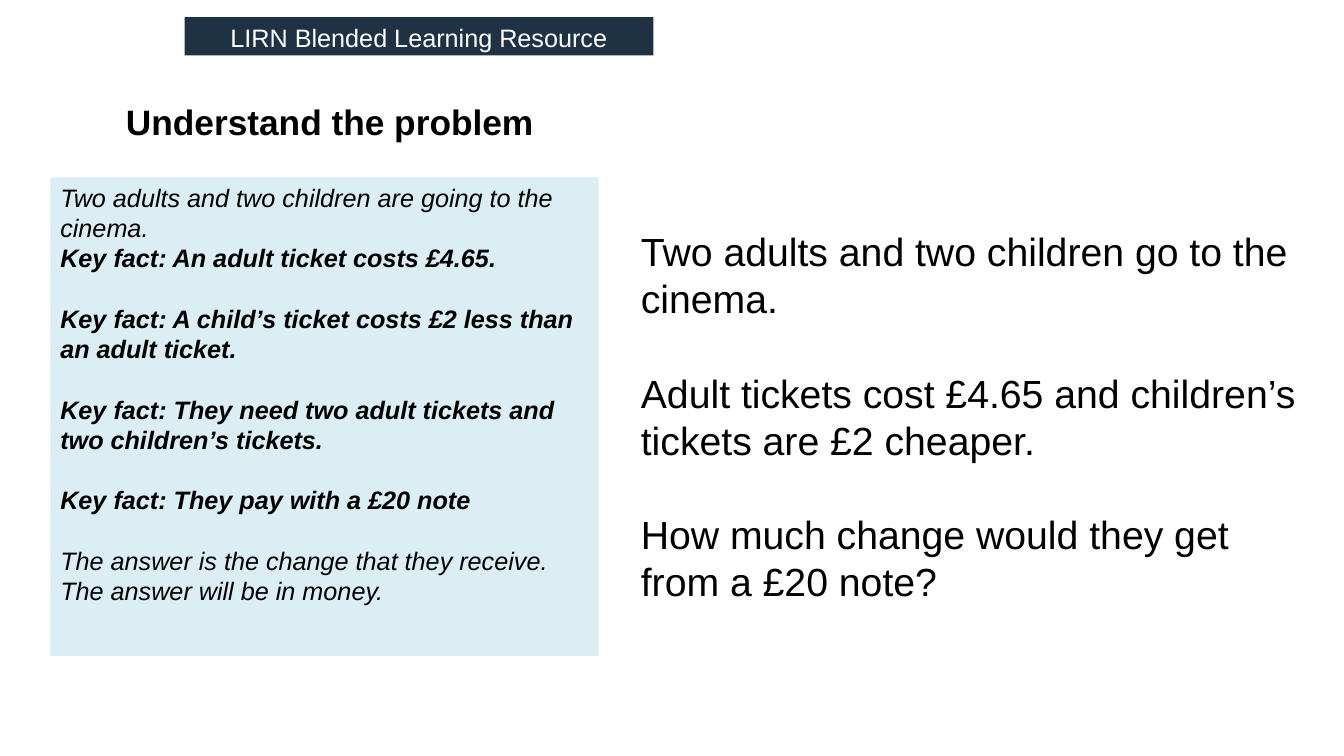
from dataclasses import dataclass

from pptx import Presentation
from pptx.dml.color import RGBColor
from pptx.enum.shapes import MSO_SHAPE
from pptx.enum.text import MSO_ANCHOR, PP_ALIGN
from pptx.slide import Slide
from pptx.util import Inches, Pt

SLIDE_WIDTH = Inches(13.33)
SLIDE_HEIGHT = Inches(7.5)


@dataclass(frozen=True)
class Theme:
    font: str = "Arial"
    ink: str = "000000"
    white: str = "FFFFFF"
    navy: str = "1F3244"
    pale_blue: str = "DBEEF4"
    title_size: float = 25.2
    problem_size: float = 28
    note_size: float = 18
    blank_line: float = 1.2  # gap between paragraphs, in type sizes


THEME = Theme()


@dataclass(frozen=True)
class Line:
    text: str
    bold: bool = False
    italic: bool = False
    gap: bool = False


@dataclass(frozen=True)
class Panel:
    """Left, top, width and height are percentages of the slide."""
    left: float
    top: float
    width: float
    height: float
    lines: list[Line]
    size: float
    color: str = THEME.ink
    fill: str | None = None
    align: PP_ALIGN = PP_ALIGN.LEFT
    anchor: MSO_ANCHOR = MSO_ANCHOR.TOP
    margin_top: float = 0.05
    margin_bottom: float = 0.05


def key_fact(text: str, gap: bool = True) -> Line:
    return Line(f"Key fact: {text}", bold=True, italic=True, gap=gap)


PANELS = [
    # Title
    Panel(8.63, 13.07, 39.53, 6, [Line("Understand the problem", bold=True)],
          THEME.title_size, anchor=MSO_ANCHOR.MIDDLE),
    # Key facts
    Panel(3.75, 23.45, 40.8, 63.3, [
        Line("Two adults and two children are going to the cinema.", italic=True),
        key_fact("An adult ticket costs £4.65.", gap=False),
        key_fact("A child’s ticket costs £2 less than an adult ticket."),
        key_fact("They need two adult tickets and two children’s tickets."),
        key_fact("They pay with a £20 note"),
        Line("The answer is the change that they receive. The answer will be in money.",
             italic=True, gap=True),
    ], THEME.note_size, fill=THEME.pale_blue),
    # Header band
    Panel(13.73, 2.27, 34.88, 5.07, [Line("LIRN Blended Learning Resource")],
          THEME.note_size, THEME.white, THEME.navy, PP_ALIGN.CENTER,
          margin_bottom=0),
    # Problem statement
    Panel(46.95, 29.47, 51, 51.6, [
        Line("Two adults and two children go to the cinema."),
        Line("Adult tickets cost £4.65 and children’s tickets are £2 cheaper.", gap=True),
        Line("How much change would they get from a £20 note?", gap=True),
    ], THEME.problem_size),
]


def set_attributes(target: object, values: dict[str, object]) -> None:
    for name, value in values.items():
        setattr(target, name, value)


def draw_panel(slide: Slide, panel: Panel) -> None:
    box = (int(SLIDE_WIDTH * panel.left / 100), int(SLIDE_HEIGHT * panel.top / 100),
           int(SLIDE_WIDTH * panel.width / 100), int(SLIDE_HEIGHT * panel.height / 100))
    if panel.fill:
        shape = slide.shapes.add_shape(MSO_SHAPE.RECTANGLE, *box)
        shape.shadow.inherit = False
        shape.fill.solid()
        shape.fill.fore_color.rgb = RGBColor.from_string(panel.fill)
        shape.line.fill.background()
    else:
        shape = slide.shapes.add_textbox(*box)

    text_frame = shape.text_frame
    set_attributes(text_frame, {
        "word_wrap": True,
        "vertical_anchor": panel.anchor,
        "margin_top": Inches(panel.margin_top),
        "margin_bottom": Inches(panel.margin_bottom),
    })
    for index, line in enumerate(panel.lines):
        paragraph = text_frame.add_paragraph() if index else text_frame.paragraphs[0]
        paragraph.alignment = panel.align
        if line.gap:
            paragraph.space_before = Pt(panel.size * THEME.blank_line)
        run = paragraph.add_run()
        run.text = line.text
        set_attributes(run.font, {
            "name": THEME.font,
            "size": Pt(panel.size),
            "bold": line.bold,
            "italic": line.italic,
        })
        run.font.color.rgb = RGBColor.from_string(panel.color)


def main() -> None:
    presentation = Presentation()
    set_attributes(presentation, {"slide_width": SLIDE_WIDTH, "slide_height": SLIDE_HEIGHT})
    slide = presentation.slides.add_slide(presentation.slide_layouts[6])
    for panel in PANELS:
        draw_panel(slide, panel)
    presentation.save("out.pptx")


if __name__ == "__main__":
    main()
